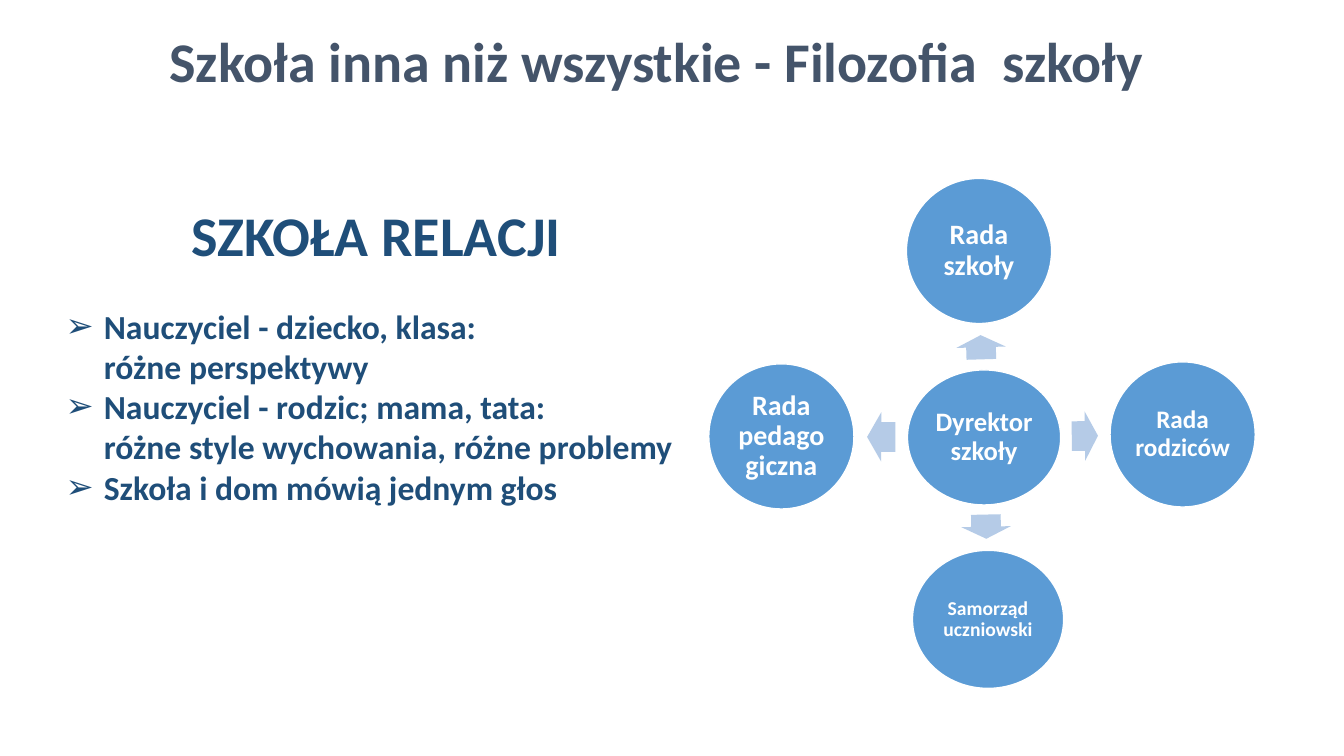
from dataclasses import dataclass

from lxml import etree
from pptx import Presentation
from pptx.dml.color import RGBColor
from pptx.enum.shapes import MSO_SHAPE
from pptx.enum.text import MSO_ANCHOR, MSO_AUTO_SIZE, PP_ALIGN
from pptx.oxml.ns import qn
from pptx.util import Inches, Pt

OVAL, ARROW = MSO_SHAPE.OVAL, MSO_SHAPE.RIGHT_ARROW
TOP, MIDDLE = MSO_ANCHOR.TOP, MSO_ANCHOR.MIDDLE
LEFT, CENTER = PP_ALIGN.LEFT, PP_ALIGN.CENTER
NO_FIT = MSO_AUTO_SIZE.NONE


@dataclass(frozen=True)
class Theme:
    """Holds the colours, font and type sizes of the slide."""
    font: str = "Calibri"
    title: str = "44546A"
    text: str = "1F4E79"
    node: str = "5B9BD5"
    arrow: str = "B5CBE7"
    white: str = "FFFFFF"
    head_size: int = 40
    list_size: int = 24


THEME = Theme()

ITEMS = [
    ("Nauczyciel - dziecko, klasa:", True),
    ("różne perspektywy", False),
    ("Nauczyciel - rodzic; mama, tata:", True),
    ("różne style wychowania, różne problemy", False),
    ("Szkoła i dom mówią jednym głos", True),
]

NODES = [
    ("Dyrektor szkoły", 19, (1.97, 1.9, 1.52, 1.34)),
    ("Rada szkoły", 20, (1.96, 0, 1.44, 1.44)),
    ("Rada rodziców", 18, (3.98, 1.82, 1.44, 1.44)),
    ("Samorząd uczniowski", 14, (2.02, 3.69, 1.5, 1.37)),
    ("Rada pedagogiczna", 20, (0, 1.84, 1.44, 1.44)),
]

ARROWS = [
    (268.3, (2.58, 1.43, 0.24, 0.49)),
    (359.2, (3.6, 2.31, 0.26, 0.49)),
    (88.8, (2.63, 3.21, 0.24, 0.49)),
    (180.1, (1.57, 2.32, 0.28, 0.49)),
]


def style(para, size, color, align):
    """Set the font, alignment and spacing of a paragraph."""
    para.alignment = align
    para.space_before = Pt(0)
    font = para.font
    font.name, font.size, font.bold = THEME.font, Pt(size), True
    font.color.rgb = RGBColor.from_string(color)


def place(shape, box):
    """Move a shape to its box."""
    shape.left, shape.top, shape.width, shape.height = map(Inches, box)


def fill_frame(shape, text, size, color, align, anchor):
    """Write one styled paragraph into a shape."""
    frame = shape.text_frame
    frame.word_wrap = True
    frame.auto_size = NO_FIT
    frame.vertical_anchor = anchor
    frame.text = text
    style(frame.paragraphs[0], size, color, align)
    return frame


def add_title(slide, box):
    """Place the slide title."""
    title = slide.shapes.title
    place(title, box)
    fill_frame(title, "Szkoła inna niż wszystkie - Filozofia  szkoły",
               THEME.head_size, THEME.title, LEFT, TOP)


def add_head(slide, box):
    """Place the heading above the list."""
    head = slide.shapes.add_textbox(*map(Inches, box))
    fill_frame(head, "SZKOŁA RELACJI", THEME.head_size, THEME.text, CENTER, TOP)


def add_list(slide, box):
    """Place the list with its bulleted and plain lines."""
    body = slide.placeholders[1]
    place(body, box)
    frame = body.text_frame
    frame.auto_size = NO_FIT
    frame.vertical_anchor = TOP
    frame.text = "\n".join(text for text, _ in ITEMS)
    indent = Inches(0.38)
    for para, (_, mark) in zip(frame.paragraphs, ITEMS):
        props = para._p.get_or_add_pPr()
        props.set("marL", str(indent))
        props.set("indent", str(-indent if mark else 0))
        if mark:
            etree.SubElement(props, qn("a:buChar")).set("char", "➢")
        else:
            etree.SubElement(props, qn("a:buNone"))
        style(para, THEME.list_size, THEME.text, LEFT)


def add_part(shapes, kind, box, color):
    """Add a filled shape without a shadow."""
    part = shapes.add_shape(kind, *map(Inches, box))
    part.shadow.inherit = False
    part.fill.solid()
    part.fill.fore_color.rgb = RGBColor.from_string(color)
    return part


def add_chart(slide, left, top):
    """Draw the circles and arrows around the head of the school."""
    shapes = slide.shapes.add_group_shape().shapes

    def shift(box):
        """Turn an inner box into a slide box."""
        x, y, width, height = box
        return left + x, top + y, width, height

    for turn, box in ARROWS:
        arrow = add_part(shapes, ARROW, shift(box), THEME.arrow)
        arrow.line.fill.background()
        arrow.adjustments[0], arrow.adjustments[1] = 0.6, 0.5
        arrow.rotation = turn
    for text, size, box in NODES:
        node = add_part(shapes, OVAL, shift(box), THEME.node)
        node.line.color.rgb = RGBColor.from_string(THEME.white)
        node.line.width = Pt(1)
        frame = fill_frame(node, text, size, THEME.white, CENTER, MIDDLE)
        frame.margin_left = frame.margin_right = Inches(0.03)
        frame.margin_top = frame.margin_bottom = Inches(0.03)
        frame.paragraphs[0].line_spacing = 0.9


def main():
    """Build the slide and save it."""
    deck = Presentation()
    deck.slide_width, deck.slide_height = Inches(13.33), Inches(7.5)
    slide = deck.slides.add_slide(deck.slide_layouts[1])
    add_title(slide, (1.58, 0.21, 9.9, 0.77))
    add_head(slide, (0.92, 1.94, 5.62, 0.77))
    add_list(slide, (0.55, 2.98, 6.45, 2.12))
    add_chart(slide, 7.03, 1.77)
    deck.save("out.pptx")


if __name__ == "__main__":
    main()
